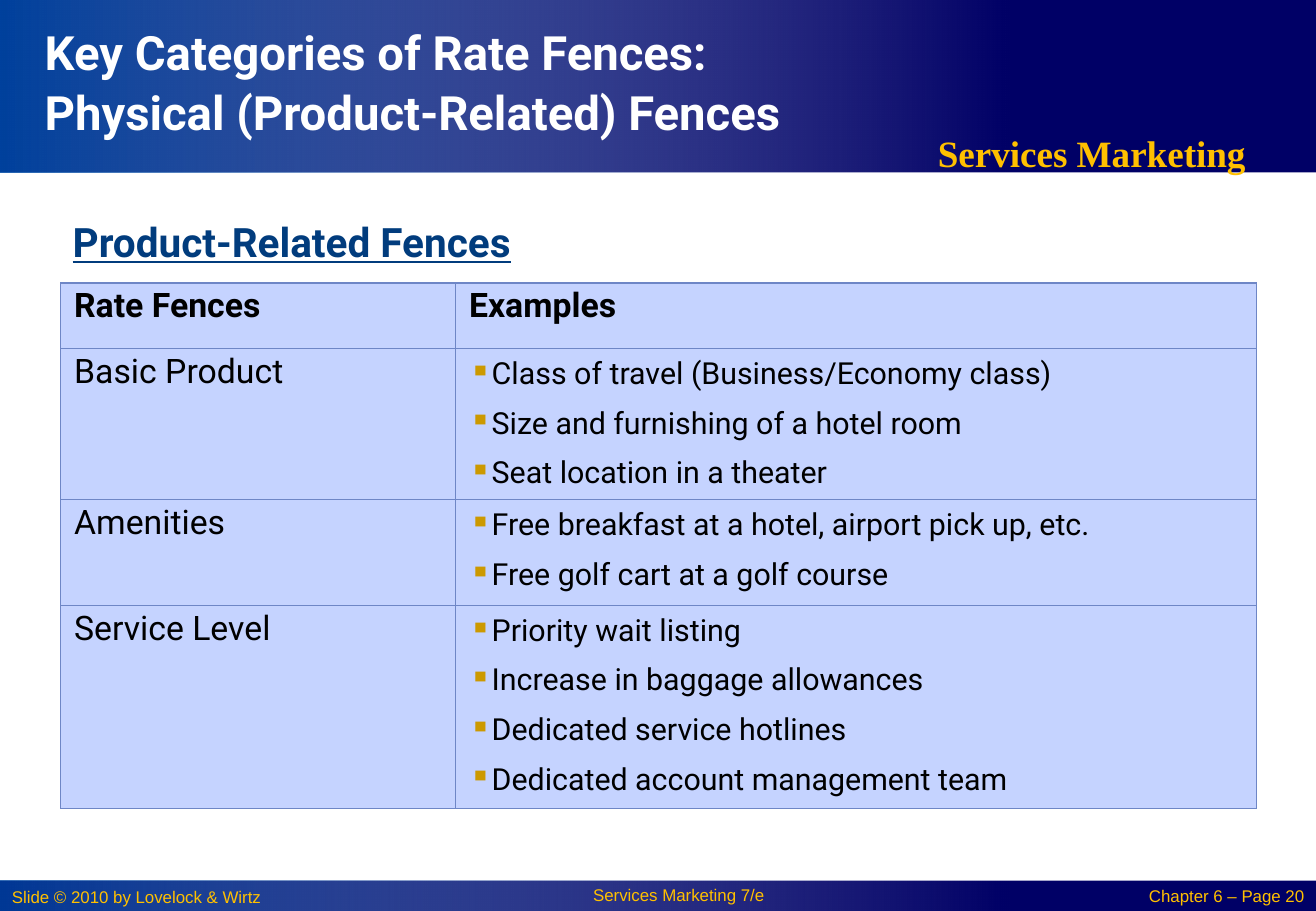
from dataclasses import dataclass

from lxml import etree
from pptx import Presentation
from pptx.dml.color import RGBColor
from pptx.enum.shapes import MSO_SHAPE
from pptx.enum.text import MSO_ANCHOR, PP_ALIGN
from pptx.oxml.ns import qn
from pptx.util import Inches, Pt

RECTANGLE = MSO_SHAPE.RECTANGLE
TOP, MIDDLE = MSO_ANCHOR.TOP, MSO_ANCHOR.MIDDLE
LEFT, CENTER, RIGHT = PP_ALIGN.LEFT, PP_ALIGN.CENTER, PP_ALIGN.RIGHT


@dataclass(frozen=True)
class Theme:
    navy: str = "000066"
    glow: str = "0152AB"
    white: str = "FFFFFF"
    black: str = "000000"
    gold: str = "FFC000"
    heading_blue: str = "013C7D"
    cell_fill: str = "C5D3FF"
    cell_border: str = "6E86C6"
    bullet: str = "CC9900"
    body_font: str = "Roboto"
    brand_font: str = "Times New Roman"
    footer_font: str = "Arial"
    title_size: int = 28
    heading_size: int = 24
    brand_size: int = 22
    label_size: int = 20
    example_size: int = 18
    footer_size: int = 10
    border_width: float = 0.75


THEME = Theme()
SLIDE_WIDTH, SLIDE_HEIGHT = 10.83, 7.5
GLOW_WIDTH = 8.33

BANDS = [(0, 1.42, 80), (7.25, 0.25, 69)]

TITLE = "Key Categories of Rate Fences:\vPhysical (Product-Related) Fences"
BRAND = "Services Marketing"
HEADING = "Product-Related Fences"
FOOTERS = [
    ("Slide © 2010 by Lovelock & Wirtz", (0, 7.25, 2.58, 0.28), LEFT, 1.0),
    ("Services Marketing 7/e", (4.25, 7.25, 2.67, 0.25), CENTER, 0.9),
    ("Chapter 6 – Page 20", (9.08, 7.26, 1.75, 0.25), RIGHT, 0.9),
]

HEADERS = ["Rate Fences", "Examples"]
FENCES = [
    ("Basic Product", [
        "Class of travel (Business/Economy class)",
        "Size and furnishing of a hotel room",
        "Seat location in a theater",
    ]),
    ("Amenities", [
        "Free breakfast at a hotel, airport pick up, etc.",
        "Free golf cart at a golf course",
    ]),
    ("Service Level", [
        "Priority wait listing",
        "Increase in baggage allowances",
        "Dedicated service hotlines",
        "Dedicated account management team",
    ]),
]
TABLE_LEFT, TABLE_TOP = 0.5, 2.33
COLUMN_WIDTHS = [3.25, 6.59]
ROW_HEIGHTS = [0.54, 1.23, 0.87, 1.67]
BULLET_INDENT = 0.15
EXAMPLE_GAP = 3.6


def rgb(color):
    return RGBColor.from_string(color)


def set_font(paragraph, name, size, color, bold=False, underline=False):
    font = paragraph.font
    font.name, font.size, font.bold = name, Pt(size), bold
    font.color.rgb = rgb(color)
    if underline:
        font.underline = True


def add_text(slide, text, box, font, align=LEFT, spacing=1.0, anchor=TOP):
    frame = slide.shapes.add_textbox(*map(Inches, box)).text_frame
    frame.word_wrap = True
    frame.vertical_anchor = anchor
    paragraph = frame.paragraphs[0]
    paragraph.text = text
    paragraph.alignment = align
    paragraph.line_spacing = spacing
    set_font(paragraph, *font)


def add_rectangle(slide, top, width, height):
    shape = slide.shapes.add_shape(
        RECTANGLE, 0, Inches(top), Inches(width), Inches(height))
    shape.shadow.inherit = False
    shape.line.fill.background()
    return shape


def add_band(slide, top, height, opacity):
    base = add_rectangle(slide, top, SLIDE_WIDTH, height)
    base.fill.solid()
    base.fill.fore_color.rgb = rgb(THEME.navy)

    glow = add_rectangle(slide, top, GLOW_WIDTH, height)
    glow.fill.gradient()
    glow.fill.gradient_angle = 0
    for stop, color in zip(glow.fill.gradient_stops, (THEME.glow, THEME.white)):
        stop.color.rgb = rgb(color)
    for color, percent in zip(glow.element.spPr.iter(qn("a:srgbClr")), (opacity, 0)):
        etree.SubElement(color, qn("a:alpha"), val=str(percent * 1000))


def style_cell(cell):
    properties = cell._tc.get_or_add_tcPr()
    for side in ("a:lnL", "a:lnR", "a:lnT", "a:lnB"):
        line = etree.SubElement(properties, qn(side), w=str(Pt(THEME.border_width)))
        fill = etree.SubElement(line, qn("a:solidFill"))
        etree.SubElement(fill, qn("a:srgbClr"), val=THEME.cell_border)
    cell.fill.solid()
    cell.fill.fore_color.rgb = rgb(THEME.cell_fill)
    cell.margin_left = cell.margin_right = Inches(0.11)


def add_bullet(paragraph):
    properties = paragraph._p.get_or_add_pPr()
    properties.set("marL", str(Inches(BULLET_INDENT)))
    properties.set("indent", str(-Inches(BULLET_INDENT)))
    color = etree.SubElement(properties, qn("a:buClr"))
    etree.SubElement(color, qn("a:srgbClr"), val=THEME.bullet)
    etree.SubElement(properties, qn("a:buChar"), char="▪")


def fill_label(cell, text, bold=False):
    style_cell(cell)
    paragraph = cell.text_frame.paragraphs[0]
    paragraph.text = text
    paragraph.line_spacing = 0.9
    set_font(paragraph, THEME.body_font, THEME.label_size, THEME.black, bold)


def fill_examples(cell, examples):
    style_cell(cell)
    frame = cell.text_frame
    frame.text = "\n".join(examples)
    for index, paragraph in enumerate(frame.paragraphs):
        paragraph.line_spacing = 1.05
        paragraph.space_before = Pt(EXAMPLE_GAP if index else 0)
        paragraph.space_after = Pt(EXAMPLE_GAP)
        add_bullet(paragraph)
        set_font(paragraph, THEME.body_font, THEME.example_size, THEME.black)


def add_fence_table(slide):
    box = (TABLE_LEFT, TABLE_TOP, sum(COLUMN_WIDTHS), sum(ROW_HEIGHTS))
    table = slide.shapes.add_table(
        len(ROW_HEIGHTS), len(COLUMN_WIDTHS), *map(Inches, box)).table
    for column, width in zip(table.columns, COLUMN_WIDTHS):
        column.width = Inches(width)
    for row, height in zip(table.rows, ROW_HEIGHTS):
        row.height = Inches(height)
    for column, header in enumerate(HEADERS):
        fill_label(table.cell(0, column), header, bold=True)
    for row, (fence, examples) in enumerate(FENCES, start=1):
        fill_label(table.cell(row, 0), fence)
        fill_examples(table.cell(row, 1), examples)


def main():
    presentation = Presentation()
    presentation.slide_width = Inches(SLIDE_WIDTH)
    presentation.slide_height = Inches(SLIDE_HEIGHT)
    slide = presentation.slides.add_slide(presentation.slide_layouts[6])

    for band in BANDS:
        add_band(slide, *band)
    add_text(slide, BRAND, (7, 0.88, 3.97, 0.62),
             (THEME.brand_font, THEME.brand_size, THEME.gold, True), CENTER, 1.4)
    for text, box, align, spacing in FOOTERS:
        add_text(slide, text, box,
                 (THEME.footer_font, THEME.footer_size, THEME.gold), align, spacing)
    add_text(slide, TITLE, (0.27, 0, 8.93, 1.32),
             (THEME.body_font, THEME.title_size, THEME.white, True),
             spacing=1.05, anchor=MIDDLE)
    add_fence_table(slide)
    add_text(slide, HEADING, (0.5, 1.58, 5.08, 0.64),
             (THEME.body_font, THEME.heading_size, THEME.heading_blue, True, True),
             spacing=1.4)
    presentation.save("out.pptx")


if __name__ == "__main__":
    main()
